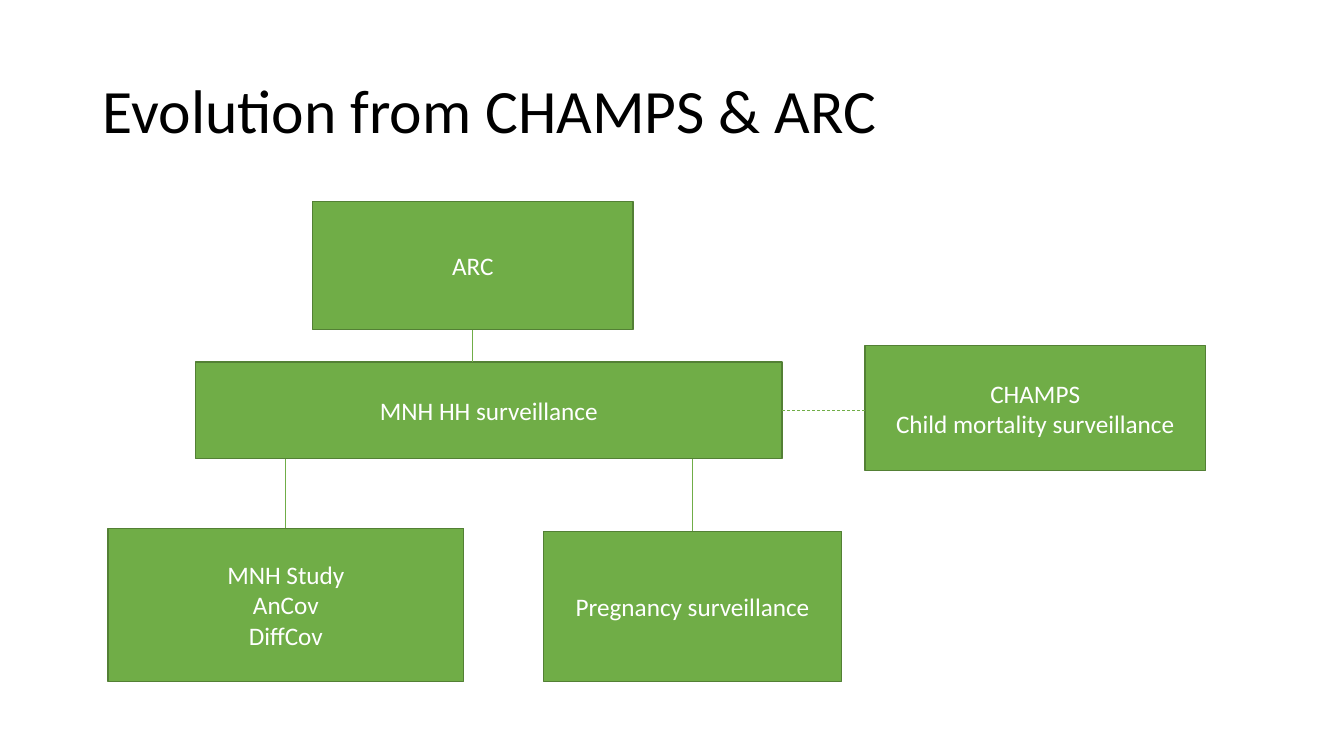
from dataclasses import dataclass

from lxml import etree
from pptx import Presentation
from pptx import util as u
from pptx.dml.color import RGBColor
from pptx.enum import dml, shapes, text
from pptx.oxml.ns import qn


@dataclass(frozen=True)
class Theme:
    """Colours, font and sizes in points."""
    font: str = "Calibri"
    ink: str = "000000"
    box_ink: str = "FFFFFF"
    box_fill: str = "70AD47"
    box_line: str = "538035"
    link: str = "70AD47"
    title_size: float = 44
    box_size: float = 18
    box_line_width: float = 1
    link_width: float = 0.5


class Diagram:
    """Draws titles, boxes and links placed in percent of the slide's size."""

    def __init__(self, presentation, theme):
        """Add a blank slide to draw on."""
        self.theme = theme
        self.width = presentation.slide_width
        self.height = presentation.slide_height
        self.slide = presentation.slides.add_slide(presentation.slide_layouts[6])

    def place(self, left, top, width, height):
        """Turn shares of the slide into lengths."""
        return (u.Emu(round(left * self.width / 100)),
                u.Emu(round(top * self.height / 100)),
                u.Emu(round(width * self.width / 100)),
                u.Emu(round(height * self.height / 100)))

    def label(self, shape, lines, size, colour, alignment, spacing=1.0):
        """Fill a shape with one paragraph for each line."""
        frame = shape.text_frame
        frame.word_wrap = True
        frame.vertical_anchor = text.MSO_ANCHOR.MIDDLE
        for index, line in enumerate(lines):
            paragraph = frame.add_paragraph() if index else frame.paragraphs[0]
            paragraph.alignment = alignment
            paragraph.line_spacing = spacing
            run = paragraph.add_run()
            run.text = line
            run.font.name = self.theme.font
            run.font.size = u.Pt(size)
            run.font.color.rgb = RGBColor.from_string(colour)

    def title(self, area, line):
        """Add the slide's heading."""
        shape = self.slide.shapes.add_textbox(*self.place(*area))
        self.label(shape, [line], self.theme.title_size, self.theme.ink,
                   text.PP_ALIGN.LEFT, 0.9)

    def box(self, area, *lines):
        """Add a labelled rectangle and return it."""
        shape = self.slide.shapes.add_shape(
            shapes.MSO_SHAPE.RECTANGLE, *self.place(*area))
        shape.shadow.inherit = False
        shape.fill.solid()
        shape.fill.fore_color.rgb = RGBColor.from_string(self.theme.box_fill)
        shape.line.color.rgb = RGBColor.from_string(self.theme.box_line)
        shape.line.width = u.Pt(self.theme.box_line_width)
        self.label(shape, lines, self.theme.box_size, self.theme.box_ink,
                   text.PP_ALIGN.CENTER)
        return shape

    def link(self, start_x, start_y, end_x, end_y):
        """Add a thin straight line and return it."""
        connector = self.slide.shapes.add_connector(
            shapes.MSO_CONNECTOR.STRAIGHT, start_x, start_y, end_x, end_y)
        connector.line.color.rgb = RGBColor.from_string(self.theme.link)
        connector.line.width = u.Pt(self.theme.link_width)
        etree.SubElement(connector._element.spPr, qn("a:effectLst"))
        return connector

    def link_down(self, upper, lower, centred_on):
        """Join two stacked boxes at the middle of one of them."""
        middle = centred_on.left + centred_on.width // 2
        self.link(middle, upper.top + upper.height, middle, lower.top)

    def link_across(self, left, right):
        """Join two neighbouring boxes with a dashed line."""
        middle = left.top + left.height // 2
        connector = self.link(right.left, middle, left.left + left.width, middle)
        connector.line.dash_style = dml.MSO_LINE.DASH


def main():
    """Build the slide and save it."""
    presentation = Presentation()
    presentation.slide_width = u.Inches(13.33)
    presentation.slide_height = u.Inches(7.5)
    diagram = Diagram(presentation, Theme())

    diagram.title((6.9, 5.33, 86.25, 19.33), "Evolution from CHAMPS & ARC")
    arc = diagram.box((23.25, 26.67, 23.85, 16.93), "ARC")
    study = diagram.box((8.03, 69.87, 26.48, 20.27),
                        "MNH Study", "AnCov", "DiffCov")
    household = diagram.box((14.55, 47.87, 43.65, 12.8), "MNH HH surveillance")
    champs = diagram.box((64.35, 45.73, 25.35, 16.53),
                         "CHAMPS", "Child mortality surveillance")
    pregnancy = diagram.box((40.43, 70.27, 22.2, 19.87),
                            "Pregnancy surveillance")

    diagram.link_down(arc, household, arc)
    for branch in (study, pregnancy):
        diagram.link_down(household, branch, branch)
    diagram.link_across(household, champs)

    presentation.save("out.pptx")


if __name__ == "__main__":
    main()
